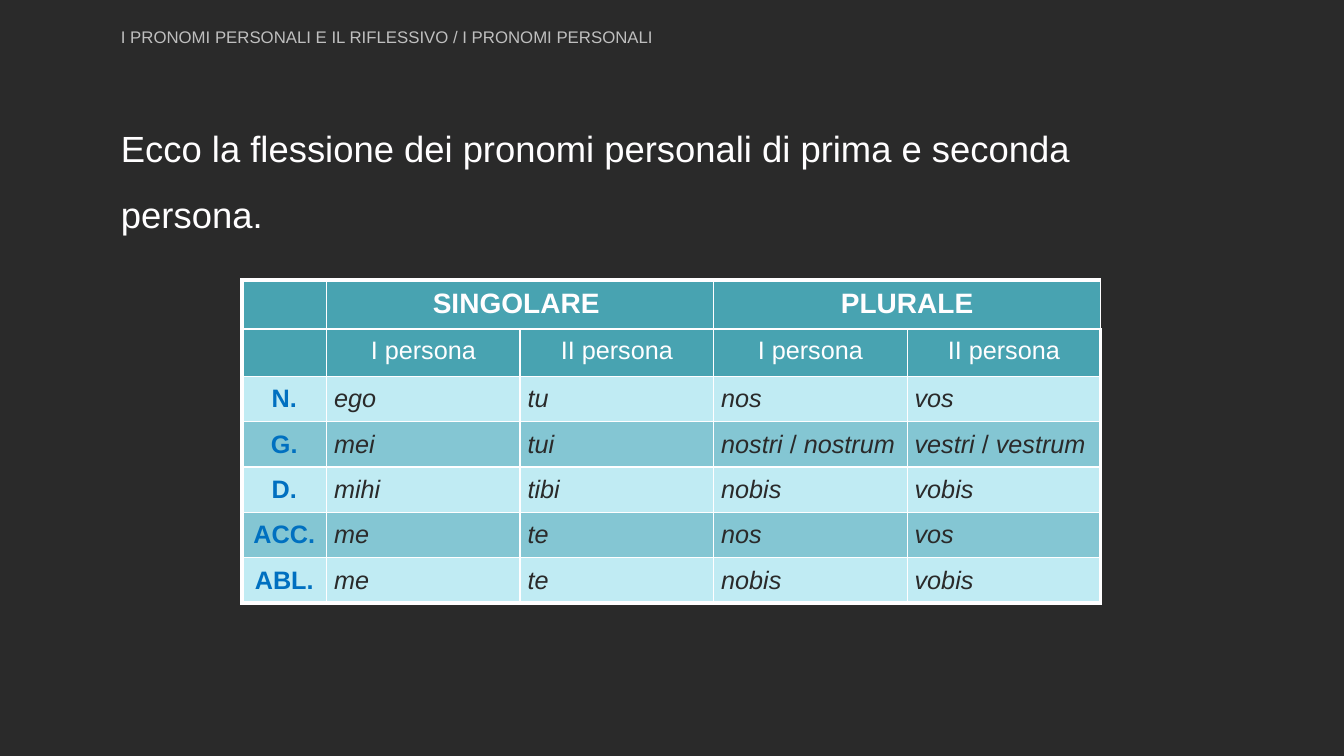
from dataclasses import dataclass

from lxml.etree import SubElement as Sub
from pptx import Presentation
from pptx.dml.color import RGBColor as Rgb
from pptx.enum.text import MSO_ANCHOR as Anchor, PP_ALIGN as Align
from pptx.oxml.ns import qn
from pptx.slide import Slide
from pptx.table import _Cell as Cell
from pptx.text.text import TextFrame as Frame
from pptx.util import Inches, Pt

COLS, ROWS = 160, 90
WIDTH, HEIGHT = Inches(13.33), Inches(7.5)
HUES = {"back": "2A2A2A", "grey": "BFBFBF", "white": "FFFEFF",
        "teal": "48A3B1", "pale": "C0EBF3", "mid": "84C6D3", "blue": "0070C0"}
SIDES = ("L", "R", "T", "B")


@dataclass
class Box:
    text: str
    top: float
    wide: float
    high: float
    size: int
    hue: str
    gap: float
    anchor: Anchor


BOXES = [
    Box("I PRONOMI PERSONALI E IL RIFLESSIVO / I PRONOMI PERSONALI",
        2.64, 85.08, 3.6, 12, "grey", 1, Anchor.MIDDLE),
    Box("Ecco la flessione dei pronomi personali di prima e seconda persona.",
        11.88, 132.36, 16.44, 26, "white", 1.5, Anchor.TOP),
]
FORMS = [
    ["", "SINGOLARE ", "", "PLURALE", ""],
    ["", "I persona", "II persona", "I persona", "II persona"],
    ["N.", "ego", "tu", "nos", "vos"],
    ["G.", "mei", "tui", "nostri / nostrum", "vestri / vestrum"],
    ["D.", "mihi", "tibi", "nobis", "vobis"],
    ["ACC.", "me", "te", "nos", "vos"],
    ["ABL.", "me", "te", "nobis", "vobis"],
]
WIDES = [10.08] + [23.04] * 4
HIGHS = [5.64] * 2 + [5.24] * 5


def across(cols: float) -> int:
    return round(WIDTH * cols / COLS)


def down(rows: float) -> int:
    return round(HEIGHT * rows / ROWS)


def shade(name: str) -> Rgb:
    return Rgb.from_string(HUES[name])


def write(frame: Frame, text: str, *, size: int = 18, hue: str = "white",
          bold: bool = False, slant: bool = False,
          align: Align = Align.LEFT, gap: float = 1) -> None:
    line = frame.paragraphs[0]
    line.alignment, line.line_spacing = align, gap
    first, slash, last = text.partition(" / ") if slant else (text, "", "")
    for part in filter(None, (first, slash, last)):
        run = line.add_run()
        run.text = part
        font = run.font
        font.name, font.size, font.bold = "Arial", Pt(size), bold
        font.italic = slant and part != slash
        font.color.rgb = shade(hue)


def place(slide: Slide, box: Box) -> None:
    frame = slide.shapes.add_textbox(across(13.8), down(box.top),
                                     across(box.wide), down(box.high)).text_frame
    frame.word_wrap, frame.vertical_anchor = True, box.anchor
    frame.margin_left = frame.margin_right = across(0.6)
    frame.margin_top = frame.margin_bottom = down(0.6)
    write(frame, box.text, size=box.size, hue=box.hue, gap=box.gap)


def edge(cell: Cell, outer: set[str]) -> None:
    props = cell._tc.get_or_add_tcPr()
    for side in SIDES:
        width = Pt(3 if side in outer else 1)
        rule = Sub(props, qn(f"a:ln{side}"), w=str(width))
        Sub(Sub(rule, qn("a:solidFill")), qn("a:srgbClr"), val=HUES["white"])


def style(row: int, col: int) -> dict:
    if row < 2:
        return {"size": 18 if row else 20, "bold": not row, "align": Align.CENTER}
    if col == 0:
        return {"hue": "blue", "bold": True, "align": Align.CENTER}
    return {"hue": "back", "slant": True}


def dress(cell: Cell, row: int, col: int) -> None:
    ends = (col == 0, col == len(WIDES) - 1, row == 0, row == len(HIGHS) - 1)
    edge(cell, {side for side, end in zip(SIDES, ends) if end})
    cell.fill.solid()
    cell.fill.fore_color.rgb = shade("teal" if row < 2 else ("pale", "mid")[row % 2])
    cell.margin_left = cell.margin_right = across(0.9)
    cell.margin_top = cell.margin_bottom = down(0.9)
    cell.vertical_anchor = Anchor.TOP if row < 2 else Anchor.MIDDLE
    if FORMS[row][col]:
        write(cell.text_frame, FORMS[row][col], **style(row, col))


def chart(slide: Slide) -> None:
    table = slide.shapes.add_table(len(HIGHS), len(WIDES), across(28.8), down(33.36),
                                   across(sum(WIDES)), down(sum(HIGHS))).table
    for col, wide in enumerate(WIDES):
        table.columns[col].width = across(wide)
    for row, high in enumerate(HIGHS):
        table.rows[row].height = down(high)
        for col in range(len(WIDES)):
            dress(table.cell(row, col), row, col)
    for col in (1, 3):
        table.cell(0, col).merge(table.cell(0, col + 1))


def main() -> None:
    """Build the slide on Latin personal pronouns."""
    deck = Presentation()
    deck.slide_width, deck.slide_height = WIDTH, HEIGHT
    slide = deck.slides.add_slide(deck.slide_layouts[6])
    slide.background.fill.solid()
    slide.background.fill.fore_color.rgb = shade("back")
    for box in BOXES:
        place(slide, box)
    chart(slide)
    deck.save("out.pptx")


if __name__ == "__main__":
    main()
